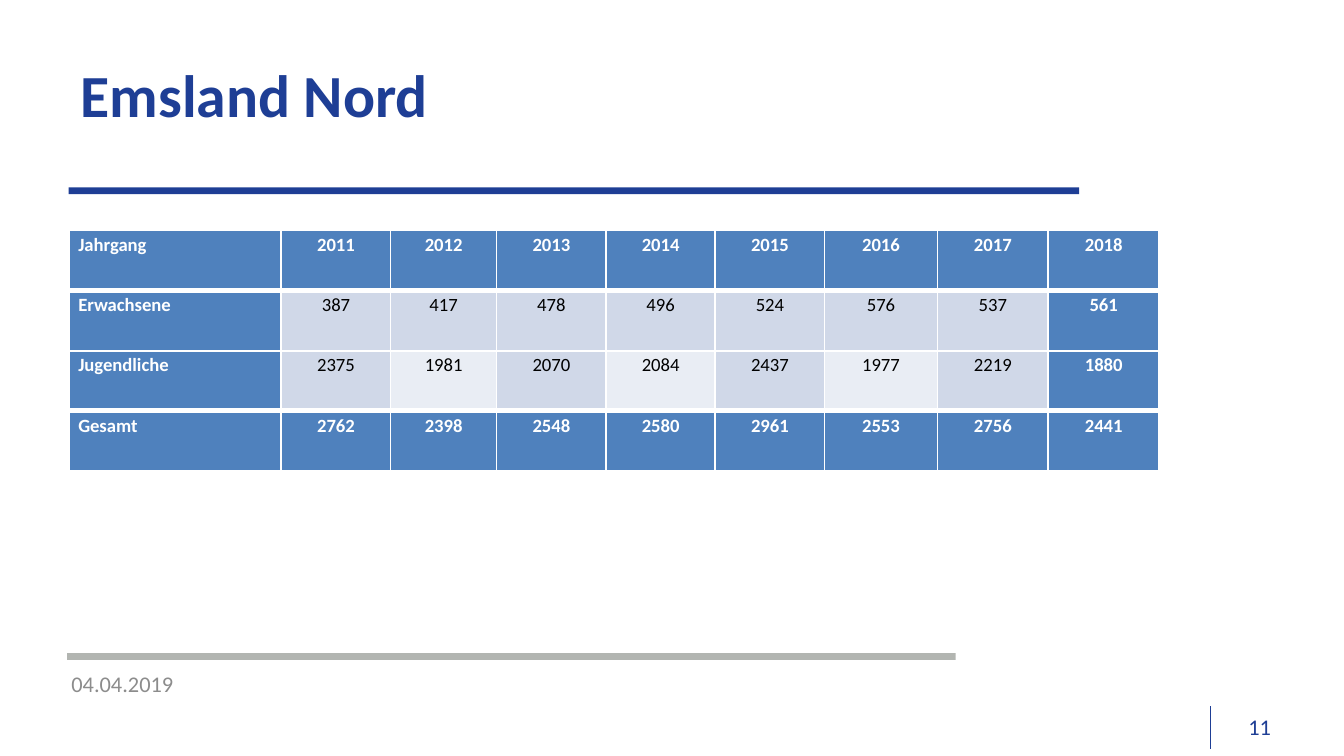
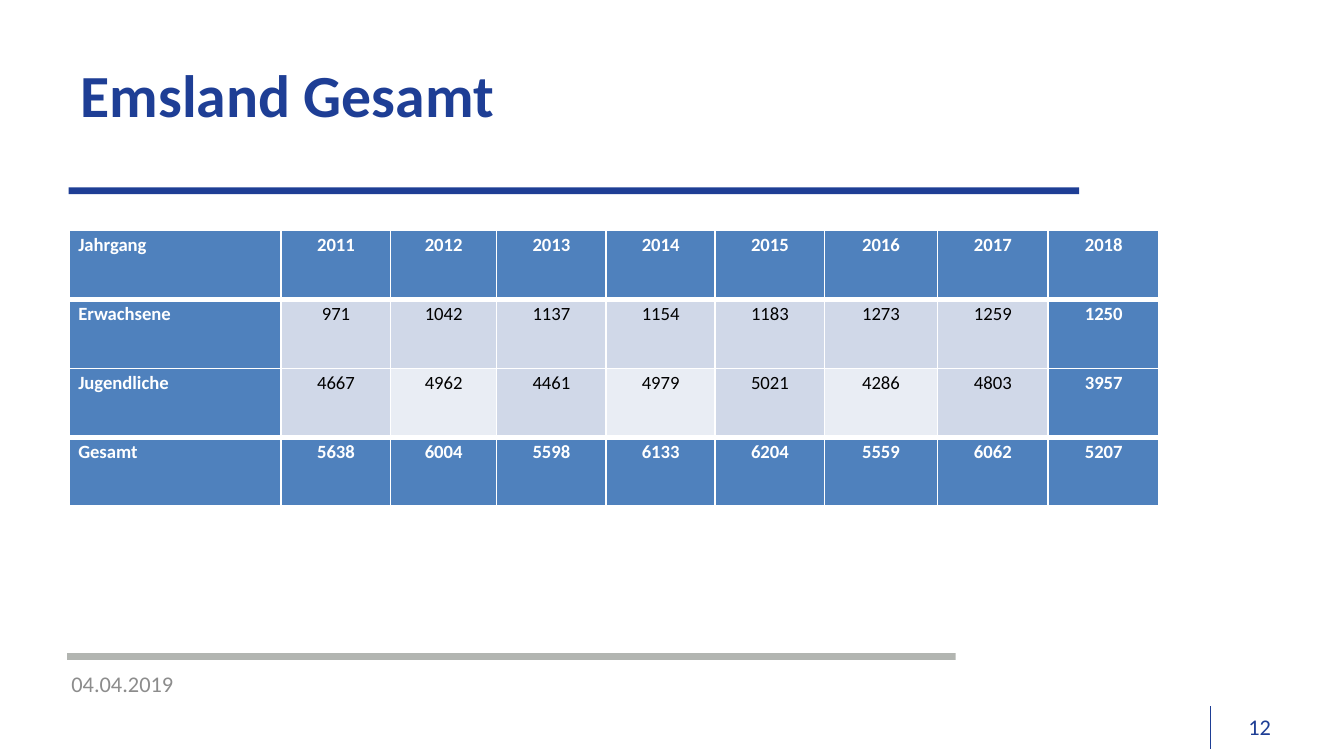
from lxml import etree
from pptx import Presentation
from pptx.dml.color import RGBColor
from pptx.enum.shapes import MSO_CONNECTOR, MSO_SHAPE
from pptx.enum.text import MSO_ANCHOR, PP_ALIGN
from pptx.oxml.ns import qn
from pptx.util import Inches, Pt

RECT, LINE = MSO_SHAPE.RECTANGLE, MSO_CONNECTOR.STRAIGHT
MIDDLE, TOP = MSO_ANCHOR.MIDDLE, MSO_ANCHOR.TOP
LEFT, CENTER, RIGHT = PP_ALIGN.LEFT, PP_ALIGN.CENTER, PP_ALIGN.RIGHT

FONT = "Calibri"
HUES = {"navy": "1E3E95", "bar": "666D64", "date": "8C8C8C", "head": "4F81BD",
        "band": "D0D8E8", "pale": "E9EDF4", "white": "FFFFFF", "black": "000000"}
GRID = 100
WIDE = 10
HIGH = WIDE * 9 / 16
UNIT = WIDE / GRID

YEARS = list(range(2011, 2019))
COLS = [15.8, 8.13, 7.9, 8.13, 8.13, 8.13, 8.4, 8.25, 8.25]
REGIONS = [
    ("Emsland Nord", 11, 4.48,
     [387, 417, 478, 496, 524, 576, 537, 561],
     [2375, 1981, 2070, 2084, 2437, 1977, 2219, 1880]),
    ("Emsland Gesamt", 12, 5.13,
     [971, 1042, 1137, 1154, 1183, 1273, 1259, 1250],
     [4667, 4962, 4461, 4979, 5021, 4286, 4803, 3957]),
]


def span(*units):
    """Turn grid units into slide lengths."""
    return [Inches(n * UNIT) for n in units]


def color(name):
    """Look up a colour by its name."""
    return RGBColor.from_string(HUES[name])


def write(frame, words, size=12, hue="navy", bold=False, align=LEFT, anchor=MIDDLE, lead=None):
    """Put one formatted paragraph in a text frame."""
    frame.word_wrap = True
    frame.vertical_anchor = anchor
    para = frame.paragraphs[0]
    para.alignment, para.line_spacing = align, lead
    run = para.add_run()
    run.text = str(words)
    font = run.font
    font.name, font.size, font.bold = FONT, Pt(size), bold
    font.color.rgb = color(hue)


def label(slide, words, box, **style):
    """Add a text box."""
    write(slide.shapes.add_textbox(*span(*box)).text_frame, words, **style)


def bar(slide, box, hue, alpha=None):
    """Add a flat bar, see-through if alpha is given in percent."""
    shape = slide.shapes.add_shape(RECT, *span(*box))
    shape.shadow.inherit = False
    shape.fill.solid()
    shape.fill.fore_color.rgb = color(hue)
    shape.line.fill.background()
    if alpha:
        tint = shape._element.spPr.find(qn("a:solidFill"))[0]
        etree.SubElement(tint, qn("a:alpha"), val=str(alpha * 1000))


def rule(slide, ends, hue, width):
    """Add a plain line."""
    line = slide.shapes.add_connector(LINE, *span(*ends))
    line.line.color.rgb = color(hue)
    line.line.width = Pt(width)
    etree.SubElement(line._element.spPr, qn("a:effectLst"))


def edge(cell, **widths):
    """Draw white cell borders with widths in points by side."""
    props = cell._tc.get_or_add_tcPr()
    for side, width in widths.items():
        line = etree.SubElement(props, qn(f"a:ln{side}"), w=str(Pt(width)))
        fill = etree.SubElement(line, qn("a:solidFill"))
        etree.SubElement(fill, qn("a:srgbClr"), val=HUES["white"])


def paint(cell, words, row, col, last):
    """Style one cell by its place in the table."""
    strong = row in (0, last) or col in (0, len(YEARS))
    shade = "pale" if row == 2 and col % 2 == 0 else "band"
    edge(cell, L=1, R=1, T=3 if row in (1, last) else 1, B=3 if row in (0, last - 1) else 1)
    cell.fill.solid()
    cell.fill.fore_color.rgb = color("head" if strong else shade)
    cell.margin_left = cell.margin_right = Inches(0.07)
    cell.margin_top = cell.margin_bottom = 0
    cell.vertical_anchor = TOP
    write(cell.text_frame, words, size=10, hue="white" if strong else "black", bold=strong,
          align=CENTER if col else LEFT, anchor=None, lead=1.15)


def grid(slide, rows, pitch):
    """Add the table of yearly counts."""
    box = span(5.13, 17.15, sum(COLS), pitch * len(rows))
    table = slide.shapes.add_table(len(rows), len(COLS), *box).table
    table.horz_banding = False
    for col, width in zip(table.columns, span(*COLS)):
        col.width = width
    for r, row in enumerate(rows):
        table.rows[r].height = span(pitch)[0]
        for c, words in enumerate(row):
            paint(table.cell(r, c), words, r, c, len(rows) - 1)


def base(deck, title, page):
    """Add a slide with the shared title, bars and footer."""
    slide = deck.slides.add_slide(deck.slide_layouts[5])
    bar(slide, (5.1, 13.95, 75.2, 0.5), "navy")
    bar(slide, (5, 48.6, 66.1, 0.5), "bar", alpha=50)
    rule(slide, (90.05, 52.55, 90.05, 55.7), "navy", 0.75)
    label(slide, "04.04.2019", (4.33, 49.35, 15.7, 3), hue="date")
    head = slide.shapes.title
    head.left, head.top, head.width, head.height = span(5, 2.3, 75.4, 9.4)
    write(head.text_frame, title, size=32, bold=True)
    label(slide, page, (90.05, 52.55, 5.5, 3), align=RIGHT)
    return slide


def main():
    """Build and save the deck."""
    deck = Presentation()
    deck.slide_width, deck.slide_height = Inches(WIDE), Inches(HIGH)
    for title, page, pitch, adults, youth in REGIONS:
        total = [a + y for a, y in zip(adults, youth)]
        rows = [["Jahrgang", *YEARS], ["Erwachsene", *adults],
                ["Jugendliche", *youth], ["Gesamt", *total]]
        grid(base(deck, title, page), rows, pitch)
    deck.save("out.pptx")


if __name__ == "__main__":
    main()
